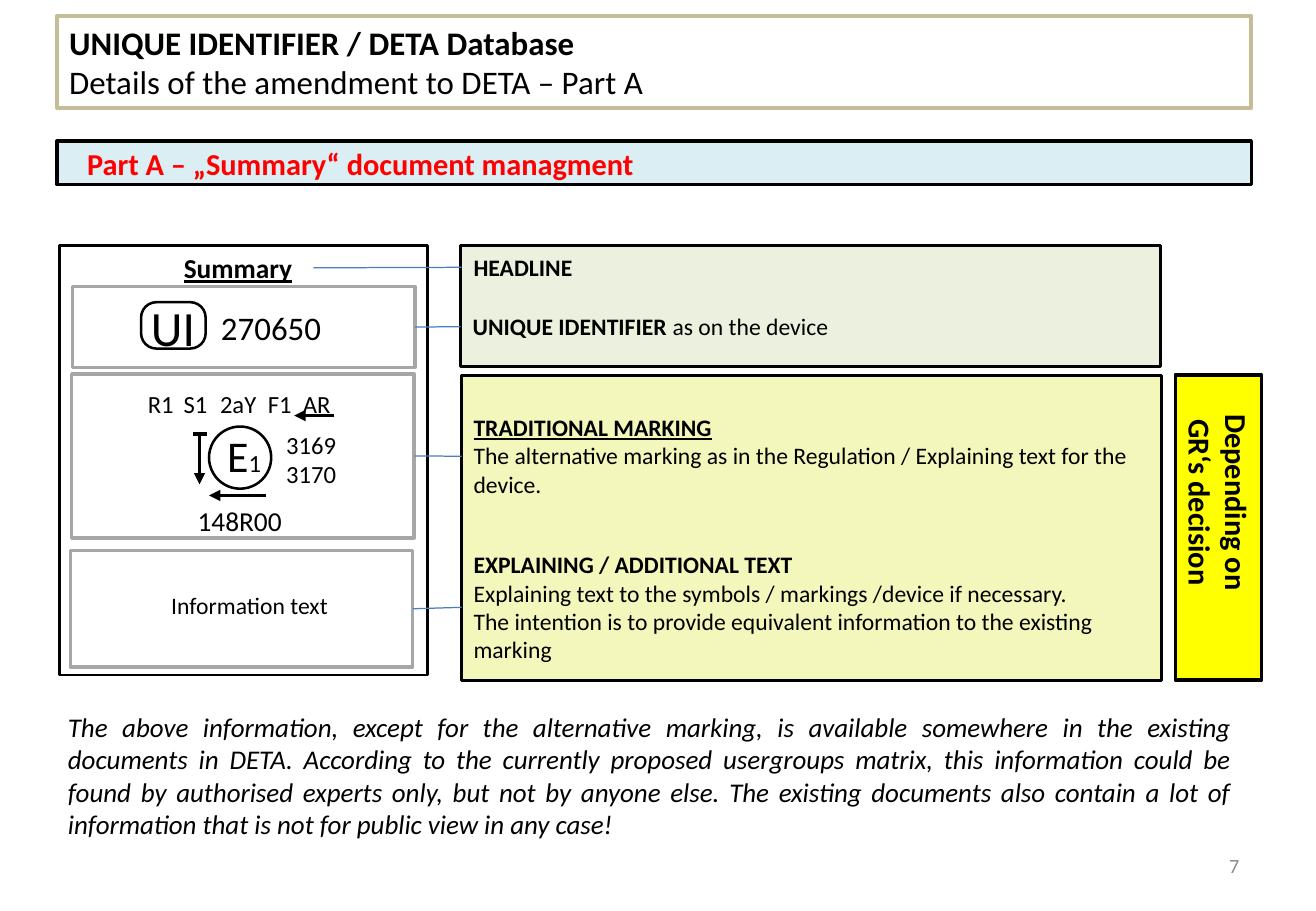
"""Builds the slide on the summary document of Part A in DETA."""
from dataclasses import dataclass

from lxml.etree import SubElement
from pptx import Presentation
from pptx.dml.color import RGBColor
from pptx.enum.shapes import MSO_CONNECTOR, MSO_SHAPE
from pptx.enum.text import MSO_ANCHOR, MSO_AUTO_SIZE, PP_ALIGN
from pptx.oxml.ns import qn
from pptx.util import Cm, Pt


@dataclass(frozen=True)
class Theme:
    font: str = "Calibri"
    black: str = "000000"
    white: str = "FFFFFF"
    red: str = "FF0000"
    page_grey: str = "8C8C8C"
    frame_grey: str = "A6A6A6"
    sand: str = "C4BD97"
    blue: str = "4B7EBC"
    pale_blue: str = "DBEEF4"
    pale_green: str = "EBF1DE"
    pale_yellow: str = "F3F7BB"
    yellow: str = "FFFF00"
    page: float = 12
    body: float = 14
    mark: float = 14.6
    closing: float = 16
    heading: float = 16.2
    banner: float = 18
    title: float = 19.5
    letter: float = 26
    symbol: float = 29.2


theme = Theme()
LEFT, CENTER, RIGHT = PP_ALIGN.LEFT, PP_ALIGN.CENTER, PP_ALIGN.RIGHT

prs = Presentation()
prs.slide_width, prs.slide_height = Cm(27.51), Cm(19.05)
slide = prs.slides.add_slide(prs.slide_layouts[5])


def add_panel(preset, box, line, width, fill=None):
    panel = slide.shapes.add_shape(preset, *map(Cm, box))
    panel.shadow.inherit = False
    panel.line.color.rgb = RGBColor.from_string(line)
    panel.line.width = Pt(width)
    if fill:
        panel.fill.solid()
        panel.fill.fore_color.rgb = RGBColor.from_string(fill)
    else:
        panel.fill.background()
    return panel


def write(holder, paragraphs, align=LEFT, color=theme.black, anchor=MSO_ANCHOR.TOP):
    frame = holder.text_frame
    frame.word_wrap = True
    frame.auto_size = MSO_AUTO_SIZE.NONE
    frame.vertical_anchor = anchor
    for index, runs in enumerate(paragraphs):
        paragraph = frame.add_paragraph() if index else frame.paragraphs[0]
        paragraph.alignment = align
        for text, size, style in runs:
            run = paragraph.add_run()
            run.text = text
            run.font.name = theme.font
            run.font.size = Pt(size)
            run.font.bold = "b" in style
            run.font.italic = "i" in style
            run.font.underline = "u" in style
            run.font.color.rgb = RGBColor.from_string(color)
    return frame


title = slide.shapes.title
title.left, title.top, title.width, title.height = map(Cm, (1.19, 0.33, 24.97, 1.93))
title.line.color.rgb = RGBColor.from_string(theme.sand)
title.line.width = Pt(2.25)
write(title, [[("UNIQUE IDENTIFIER / DETA Database", theme.title, "b")],
              [("Details of the amendment to DETA – Part A", theme.title, "")]],
      anchor=MSO_ANCHOR.MIDDLE)

panels = {}
for part, preset, box, line, width, fill in [
    ("banner", MSO_SHAPE.RECTANGLE, (1.19, 2.95, 24.97, 0.91), theme.black, 2, theme.pale_blue),
    ("decided", MSO_SHAPE.RECTANGLE, (9.65, 7.85, 14.63, 6.38), theme.black, 2, theme.pale_yellow),
    ("fixed", MSO_SHAPE.RECTANGLE, (9.63, 5.13, 14.63, 2.54), theme.black, 2, theme.pale_green),
    ("summary", MSO_SHAPE.RECTANGLE, (1.24, 5.13, 7.7, 8.99), theme.black, 1.5, None),
    ("identifier", MSO_SHAPE.RECTANGLE, (1.52, 5.99, 7.16, 1.7), theme.frame_grey, 2, None),
    ("marking", MSO_SHAPE.RECTANGLE, (1.5, 7.82, 7.16, 3.43), theme.frame_grey, 2, None),
    ("information", MSO_SHAPE.RECTANGLE, (1.47, 11.51, 7.16, 2.44), theme.frame_grey, 2, None),
    ("symbol", MSO_SHAPE.ROUNDED_RECTANGLE, (2.95, 6.32, 1.35, 0.97), theme.black, 1.5, theme.white),
    ("approval", MSO_SHAPE.OVAL, (4.37, 8.92, 1.3, 1.3), theme.black, 1.5, None),
    ("decision", MSO_SHAPE.RECTANGLE, (22.28, 10.13, 6.38, 1.8), theme.black, 2.25, theme.yellow),
]:
    panels[part] = add_panel(preset, box, line, width, fill)
panels["symbol"].adjustments[0] = 0.33

panels["decision"].rotation = 90
decision = write(panels["decision"], [[("Depending on", theme.banner, "b")],
                                      [("GR‘s decision", theme.banner, "b")]], CENTER)
decision.paragraphs[0]._p.get_or_add_pPr().set("marR", str(Cm(1.05)))

labels = {}
for part, box, align, color, paragraphs in [
    ("banner", (1.57, 2.92, 24.56, 1.02), LEFT, theme.red,
     [[("Part A – „Summary“ document managment", theme.banner, "b")]]),
    ("summary", (3.4, 5.13, 3.15, 0.94), CENTER, theme.black,
     [[("Summary", theme.heading, "bu")]]),
    ("symbol", (2.79, 6.1, 1.65, 1.5), CENTER, theme.black,
     [[("UI", theme.symbol, "")]]),
    ("number", (4.37, 6.3, 3, 1.09), LEFT, theme.black,
     [[("270650", theme.title, "")]]),
    ("functions", (2.84, 8, 4.8, 0.89), LEFT, theme.black,
     [[("R1\tS1\t2aY\tF1\tAR", theme.mark, "")]]),
    ("approval", (4.5, 8.84, 1.3, 1.37), LEFT, theme.black,
     [[("E", theme.letter, ""), ("1", theme.mark, "")]]),
    ("codes", (5.72, 8.86, 1.57, 1.5), CENTER, theme.black,
     [[("3169", theme.mark, "")], [("3170", theme.mark, "")]]),
    ("regulation", (3.84, 10.24, 2.34, 1.04), CENTER, theme.black,
     [[("148R00", theme.heading, "")]]),
    ("information", (3.33, 12.24, 4.06, 0.86), LEFT, theme.black,
     [[("Information text", theme.body, "")]]),
    ("headline", (9.65, 5.16, 16.05, 0.86), LEFT, theme.black,
     [[("HEADLINE", theme.body, "b")]]),
    ("unique", (9.63, 6.4, 16.05, 0.86), LEFT, theme.black,
     [[("UNIQUE IDENTIFIER", theme.body, "b"), (" as on the device", theme.body, "")]]),
    ("traditional", (9.65, 8.51, 14.61, 2.06), LEFT, theme.black,
     [[("TRADITIONAL MARKING", theme.body, "bu")],
      [("The alternative marking as in the Regulation / Explaining text for the device.",
        theme.body, "")]]),
    ("explaining", (9.65, 11.38, 14.58, 2.64), LEFT, theme.black,
     [[("EXPLAINING / ADDITIONAL TEXT", theme.body, "b")],
      [("Explaining text to the symbols / markings /device if necessary.", theme.body, "")],
      [("The intention is to provide equivalent information to the existing marking",
        theme.body, "")]]),
    ("closing", (1.17, 14.73, 24.82, 3), PP_ALIGN.JUSTIFY, theme.black,
     [[("The above information, except for the alternative marking, is available somewhere "
        "in the existing documents in DETA. According to the currently proposed usergroups "
        "matrix, this information could be found by authorised experts only, but not by "
        "anyone else. The existing documents also contain a lot of information that is not "
        "for public view in any case!", theme.closing, "i")]]),
    ("page", (19.96, 17.7, 6.2, 0.81), RIGHT, theme.page_grey,
     [[("7", theme.page, "")]]),
]:
    labels[part] = slide.shapes.add_textbox(*map(Cm, box))
    write(labels[part], paragraphs, align, color)

labels["banner"].text_frame.paragraphs[0].space_before = Pt(4.9)
labels["regulation"].text_frame.paragraphs[0].line_spacing = Pt(24.4)
labels["codes"].text_frame.word_wrap = False
labels["page"].text_frame.vertical_anchor = MSO_ANCHOR.MIDDLE
functions_format = labels["functions"].text_frame.paragraphs[0]._p.get_or_add_pPr()
tab_stops = SubElement(functions_format, qn("a:tabLst"))
for position in (0.75, 1.51, 2.51, 3.24):
    SubElement(tab_stops, qn("a:tab"), pos=str(Cm(position)), algn="l")

strokes = []
for explanation, source in [
    (labels["headline"], labels["summary"]),
    (labels["unique"], panels["identifier"]),
    (labels["traditional"], panels["marking"]),
    (labels["explaining"], panels["information"]),
]:
    link = slide.shapes.add_connector(MSO_CONNECTOR.STRAIGHT, 0, 0, 0, 0)
    link.begin_connect(explanation, 1)
    link.end_connect(source, 3)
    strokes.append((link, theme.blue, 0.75, False))

for ends, has_head in [
    ((6.99, 8.69, 6.15, 8.69), True),
    ((4.17, 9.09, 4.17, 10.13), True),
    ((4.04, 9.07, 4.32, 9.07), False),
    ((5.56, 10.36, 4.37, 10.36), True),
]:
    direction = slide.shapes.add_connector(MSO_CONNECTOR.STRAIGHT, *map(Cm, ends))
    strokes.append((direction, theme.black, 2.25, has_head))

for stroke, color, width, has_head in strokes:
    stroke.line.color.rgb = RGBColor.from_string(color)
    stroke.line.width = Pt(width)
    if has_head:
        SubElement(stroke.line._get_or_add_ln(), qn("a:tailEnd"), type="triangle")
    SubElement(stroke._element.spPr, qn("a:effectLst"))

prs.save("out.pptx")
